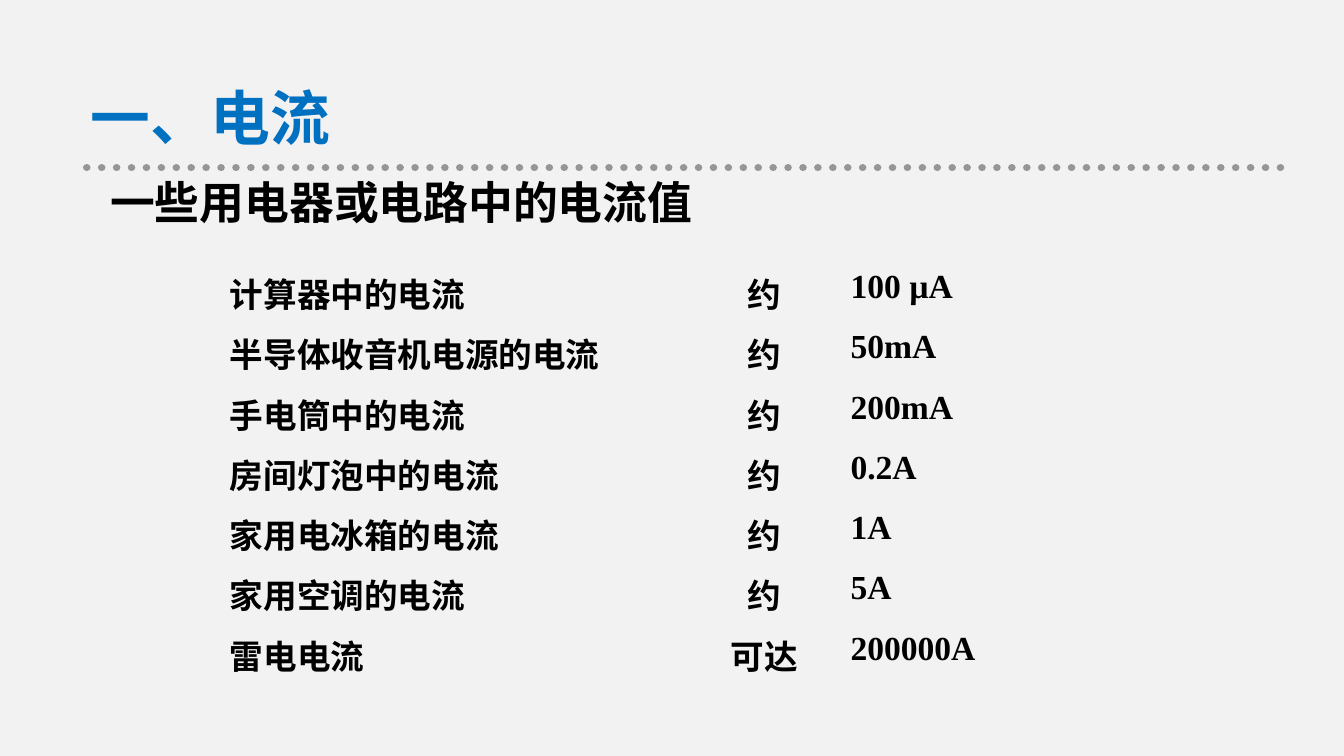
from lxml import etree
from pptx import Presentation
from pptx.dml.color import RGBColor
from pptx.enum.dml import MSO_LINE
from pptx.enum.shapes import MSO_CONNECTOR
from pptx.enum.text import PP_ALIGN
from pptx.oxml.ns import qn
from pptx.util import Cm, Pt

STRAIGHT = MSO_CONNECTOR.STRAIGHT
DOTS = MSO_LINE.ROUND_DOT
LEFT, CENTER = PP_ALIGN.LEFT, PP_ALIGN.CENTER

PAPER = RGBColor(0xF2, 0xF2, 0xF2)
GREY = RGBColor(0x96, 0x96, 0x96)
BLUE = RGBColor(0x00, 0x70, 0xC0)
BLACK = RGBColor(0x00, 0x00, 0x00)

SANS, SERIF = "Noto Sans CJK SC", "Times New Roman"
NO_STYLE = "{2D5ABB26-0587-4C30-8999-92F81FD0307C}"

# text, left, top, width, height (cm), size, Latin font, colour
HEADS = [
    ("一、电流", 1.47, 1.4, 8.41, 1.63, 32, SANS, BLUE),
    ("一些用电器或电路中的电流值", 1.83, 3.18, 17.48, 1.27, 24, SERIF, BLACK),
]

ROWS = [
    ("计算器中的电流", "约", "100 µA"),
    ("半导体收音机电源的电流", "约", "50mA"),
    ("手电筒中的电流", "约", "200mA"),
    ("房间灯泡中的电流", "约", "0.2A"),
    ("家用电冰箱的电流", "约", "1A"),
    ("家用空调的电流", "约", "5A"),
    ("雷电电流", "可达", "200000A"),
]
# width (cm), font, alignment
COLS = [(8.99, SANS, LEFT), (2.74, SANS, CENTER), (5.87, SERIF, LEFT)]
ROW_H = 1.14


def write(frame, text, size, face, color, align=LEFT):
    para = frame.paragraphs[0]
    para.text = text
    para.alignment = align
    font = para.runs[0].font
    font.size, font.bold, font.name = Pt(size), True, face
    font.color.rgb = color
    latin = font._element.find(qn("a:latin"))
    east = etree.Element(qn("a:ea"), typeface=SANS)
    latin.addnext(east)
    return para


def add_rule(slide):
    rule = slide.shapes.add_connector(
        STRAIGHT, Cm(24.2), Cm(3.17), Cm(1.58), Cm(3.17))
    rule.line.color.rgb = GREY
    rule.line.width = Pt(4)
    rule.line.dash_style = DOTS
    props = rule._element.spPr
    props.find(qn("a:ln")).set("cap", "rnd")
    etree.SubElement(props, qn("a:effectLst"))


def add_heads(slide):
    for text, left, top, wide, high, size, face, color in HEADS:
        box = slide.shapes.add_textbox(Cm(left), Cm(top), Cm(wide), Cm(high))
        box.text_frame.word_wrap = True
        para = write(box.text_frame, text, size, face, color)
        para.space_after = Pt(6)


def add_values(slide):
    wide = sum(col[0] for col in COLS)
    table = slide.shapes.add_table(
        len(ROWS), len(COLS), Cm(4.09), Cm(4.95),
        Cm(wide), Cm(ROW_H * len(ROWS))).table
    table.first_row = table.horz_banding = False
    table._tbl.tblPr.find(qn("a:tableStyleId")).text = NO_STYLE
    for col, (width, _, _) in zip(table.columns, COLS):
        col.width = Cm(width)
    for row, texts in zip(table.rows, ROWS):
        row.height = Cm(ROW_H)
        for cell, text, (_, face, align) in zip(row.cells, texts, COLS):
            cell.fill.background()
            write(cell.text_frame, text, 18, face, BLACK, align)


def main():
    deck = Presentation()
    deck.slide_width, deck.slide_height = Cm(25.4), Cm(14.29)
    slide = deck.slides.add_slide(deck.slide_layouts[6])
    slide.background.fill.solid()
    slide.background.fill.fore_color.rgb = PAPER
    add_rule(slide)
    add_heads(slide)
    add_values(slide)
    deck.save("out.pptx")


if __name__ == "__main__":
    main()
